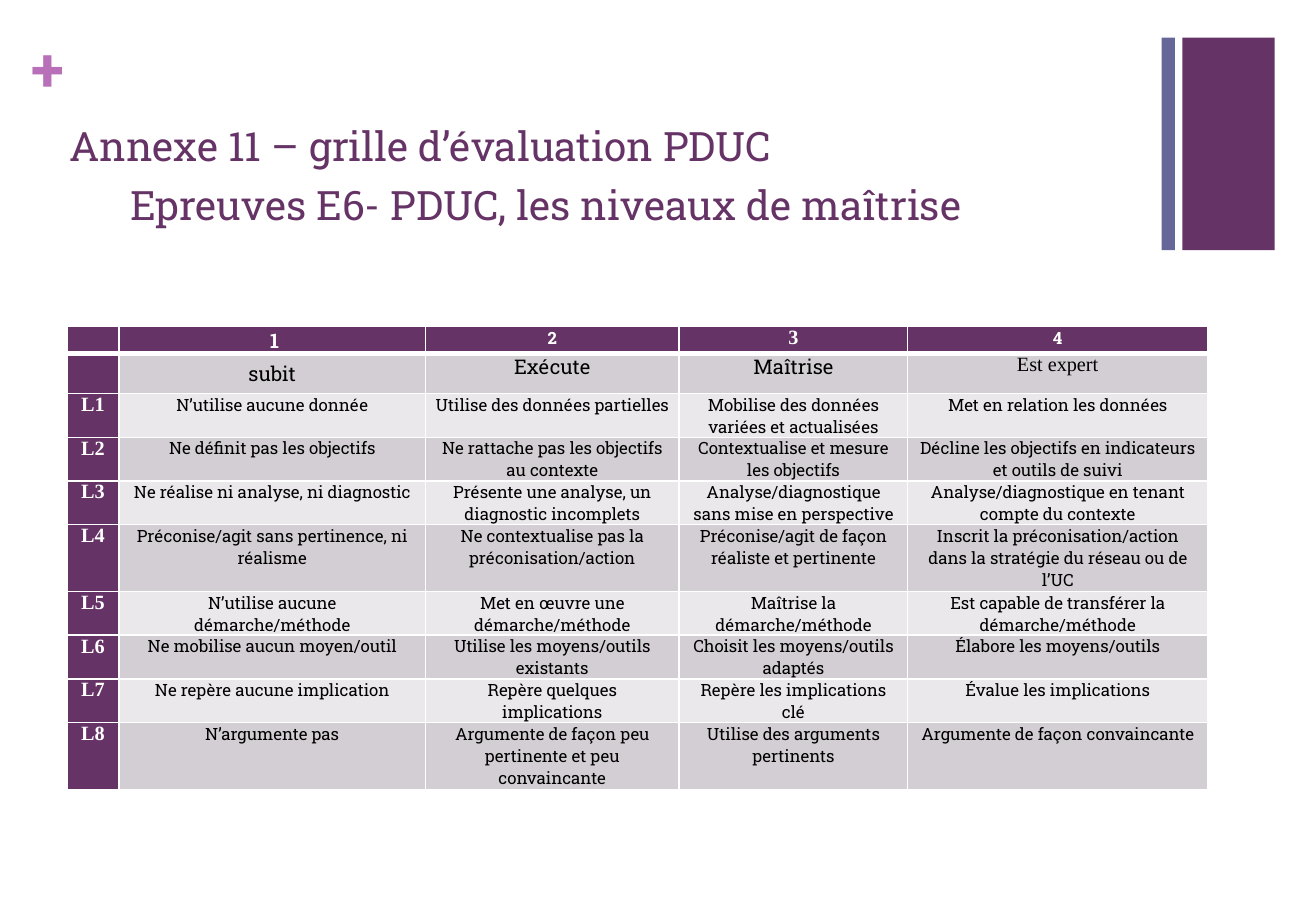
from dataclasses import dataclass

from lxml.etree import SubElement
from pptx import Presentation
from pptx.dml.color import RGBColor
from pptx.enum.shapes import MSO_SHAPE as Shape
from pptx.enum.text import MSO_ANCHOR as Anchor, MSO_AUTO_SIZE as AutoSize, PP_ALIGN as Align
from pptx.oxml.ns import qn
from pptx.slide import Slide
from pptx.table import _Cell as Cell
from pptx.text.text import _Paragraph as Paragraph
from pptx.util import Inches, Pt


@dataclass(frozen=True)
class Theme:
    purple: str = "663366"
    blue: str = "666699"
    pink: str = "B870B8"
    white: str = "FFFFFF"
    black: str = "000000"
    light_band: str = "EAE8EA"
    dark_band: str = "D3CED3"
    slab: str = "Roboto Slab"
    serif: str = "Times New Roman"
    plus_size: int = 36
    heading_size: int = 24
    label_size: int = 12
    body_size: int = 10


@dataclass(frozen=True)
class TextStyle:
    font: str
    size: int
    color: str
    bold: bool = False


@dataclass(frozen=True)
class Bar:
    left: float
    width: float
    color: str


@dataclass(frozen=True)
class HeadingLine:
    text: str
    indent: float
    space_before: int
    line_spacing: float


THEME = Theme()
HEADING = TextStyle(THEME.slab, THEME.heading_size, THEME.purple)
PLUS = TextStyle(THEME.slab, THEME.plus_size, THEME.pink, True)
SCORE_LARGE = TextStyle(THEME.slab, THEME.label_size, THEME.white, True)
SCORE_SMALL = TextStyle(THEME.slab, THEME.body_size, THEME.white, True)
LABEL = TextStyle(THEME.serif, THEME.label_size, THEME.white, True)
LEVEL = TextStyle(THEME.slab, THEME.label_size, THEME.black)
LEVEL_SERIF = TextStyle(THEME.serif, THEME.label_size, THEME.black)
CRITERION = TextStyle(THEME.slab, THEME.body_size, THEME.black)

SCORE_STYLES = [LABEL, SCORE_LARGE, SCORE_SMALL, LABEL, SCORE_SMALL]
LEVEL_STYLES = [LABEL, LEVEL, LEVEL, LEVEL, LEVEL_SERIF]
CRITERION_STYLES = [LABEL] + [CRITERION] * 4

BARS = [Bar(9.73, 0.76, THEME.purple), Bar(9.56, 0.11, THEME.blue)]
HEADING_LINES = [
    HeadingLine("Annexe 11 – grille d’évaluation PDUC", 0, 20, 0.9),
    HeadingLine("Epreuves E6- PDUC, les niveaux de maîtrise", 0.5, 6, 1.0),
]
COLUMN_WIDTHS = [0.43, 2.52, 2.09, 1.88, 2.47]
# Rows L4 and L8 hold three lines of text
ROW_HEIGHTS = [0.22, 0.33, 0.36, 0.36, 0.36, 0.55, 0.36, 0.36, 0.36, 0.55]
GRID = [
    ["", " 1", "2", "3", "4"],
    ["", "subit", "Exécute", "Maîtrise", "Est expert"],
    ["L1", "N’utilise aucune donnée", "Utilise des données partielles",
     "Mobilise des données variées et actualisées", "Met en relation les données"],
    ["L2", "Ne définit pas les objectifs", "Ne rattache pas les objectifs au contexte",
     "Contextualise et mesure les objectifs",
     "Décline les objectifs en indicateurs et outils de suivi"],
    ["L3", "Ne réalise ni analyse, ni diagnostic", "Présente une analyse, un diagnostic incomplets",
     "Analyse/diagnostique sans mise en perspective",
     "Analyse/diagnostique en tenant compte du contexte"],
    ["L4", "Préconise/agit sans pertinence, ni réalisme",
     "Ne contextualise pas la préconisation/action",
     "Préconise/agit de façon réaliste et pertinente",
     "Inscrit la préconisation/action dans la stratégie du réseau ou de l’UC"],
    ["L5", "N’utilise aucune démarche/méthode", "Met en œuvre une démarche/méthode",
     "Maîtrise la démarche/méthode", "Est capable de transférer la démarche/méthode"],
    ["L6", "Ne mobilise aucun moyen/outil", "Utilise les moyens/outils existants",
     "Choisit les moyens/outils adaptés", "Élabore les moyens/outils"],
    ["L7", "Ne repère aucune implication", "Repère quelques\nimplications",
     "Repère les implications clé", "Évalue les implications"],
    ["L8", "N’argumente pas", "Argumente de façon peu pertinente et peu convaincante",
     "Utilise des arguments pertinents", "Argumente de façon convaincante"],
]


def add_text(paragraph: Paragraph, text: str, style: TextStyle) -> None:
    for index, line in enumerate(text.split("\n")):
        if index:
            paragraph.add_line_break()
        run = paragraph.add_run()
        run.text = line
        run.font.name = style.font
        run.font.size = Pt(style.size)
        run.font.bold = style.bold
        run.font.color.rgb = RGBColor.from_string(style.color)


def draw_bar(slide: Slide, bar: Bar) -> None:
    block = slide.shapes.add_shape(
        Shape.RECTANGLE, Inches(bar.left), Inches(0.31), Inches(bar.width), Inches(1.75))
    block.shadow.inherit = False
    block.fill.solid()
    block.fill.fore_color.rgb = RGBColor.from_string(bar.color)
    block.line.fill.background()


def draw_plus(slide: Slide) -> None:
    plus = slide.shapes.add_textbox(Inches(0.26), Inches(0.25), Inches(0.31), Inches(1.21))
    frame = plus.text_frame
    frame.word_wrap = True
    frame.margin_left = frame.margin_right = frame.margin_top = frame.margin_bottom = 0
    add_text(frame.paragraphs[0], "+", PLUS)


def draw_heading(slide: Slide) -> None:
    heading = slide.shapes.title
    heading.left, heading.top = Inches(0.47), Inches(0.99)
    heading.width, heading.height = Inches(9.75), Inches(1.05)
    frame = heading.text_frame
    frame.word_wrap = True
    frame.auto_size = AutoSize.NONE
    frame.vertical_anchor = Anchor.TOP
    for index, line in enumerate(HEADING_LINES):
        paragraph = frame.add_paragraph() if index else frame.paragraphs[0]
        paragraph.alignment = Align.LEFT
        paragraph.line_spacing = line.line_spacing
        paragraph.space_before = Pt(line.space_before)
        paragraph._p.get_or_add_pPr().set("marL", str(Inches(line.indent)))
        add_text(paragraph, line.text, HEADING)


def set_borders(cell: Cell, bottom_width: int) -> None:
    properties = cell._tc.get_or_add_tcPr()
    for side in "LRTB":
        width = bottom_width if side == "B" else 1
        border = SubElement(properties, qn(f"a:ln{side}"), w=str(Pt(width)))
        fill = SubElement(border, qn("a:solidFill"))
        SubElement(fill, qn("a:srgbClr"), val=THEME.white)


def fill_cell(cell: Cell, text: str, style: TextStyle, color: str, row: int, column: int) -> None:
    set_borders(cell, 1 if row else 3)
    cell.fill.solid()
    cell.fill.fore_color.rgb = RGBColor.from_string(color)
    centred = row < 2 and column == 1
    cell.vertical_anchor = Anchor.MIDDLE if centred else Anchor.TOP
    cell.margin_left = cell.margin_right = Inches(0 if centred else 0.08)
    cell.margin_top = cell.margin_bottom = 0
    paragraph = cell.text_frame.paragraphs[0]
    paragraph.alignment = Align.CENTER
    if text:
        add_text(paragraph, text, style)
    else:
        # An empty cell needs a small type size so its row stays low
        SubElement(paragraph._p, qn("a:endParaRPr"), sz=str(style.size * 100))


def draw_grid(slide: Slide) -> None:
    grid = slide.shapes.add_table(
        len(GRID), len(COLUMN_WIDTHS), Inches(0.55), Inches(2.69),
        Inches(sum(COLUMN_WIDTHS)), Inches(sum(ROW_HEIGHTS))).table
    for column, width in zip(grid.columns, COLUMN_WIDTHS):
        column.width = Inches(width)
    for row, height in zip(grid.rows, ROW_HEIGHTS):
        row.height = Inches(height)
    for row, texts in enumerate(GRID):
        styles = {0: SCORE_STYLES, 1: LEVEL_STYLES}.get(row, CRITERION_STYLES)
        band = THEME.dark_band if row % 2 else THEME.light_band
        for column, (text, style) in enumerate(zip(texts, styles)):
            color = THEME.purple if row == 0 or column == 0 else band
            fill_cell(grid.cell(row, column), text, style, color, row, column)


def main() -> None:
    deck = Presentation()
    deck.slide_width, deck.slide_height = Inches(10.83), Inches(7.5)
    slide = deck.slides.add_slide(deck.slide_layouts[5])
    # Decoration
    for bar in BARS:
        draw_bar(slide, bar)
    draw_plus(slide)
    # Heading and evaluation grid
    draw_heading(slide)
    draw_grid(slide)
    deck.save("out.pptx")


if __name__ == "__main__":
    main()
